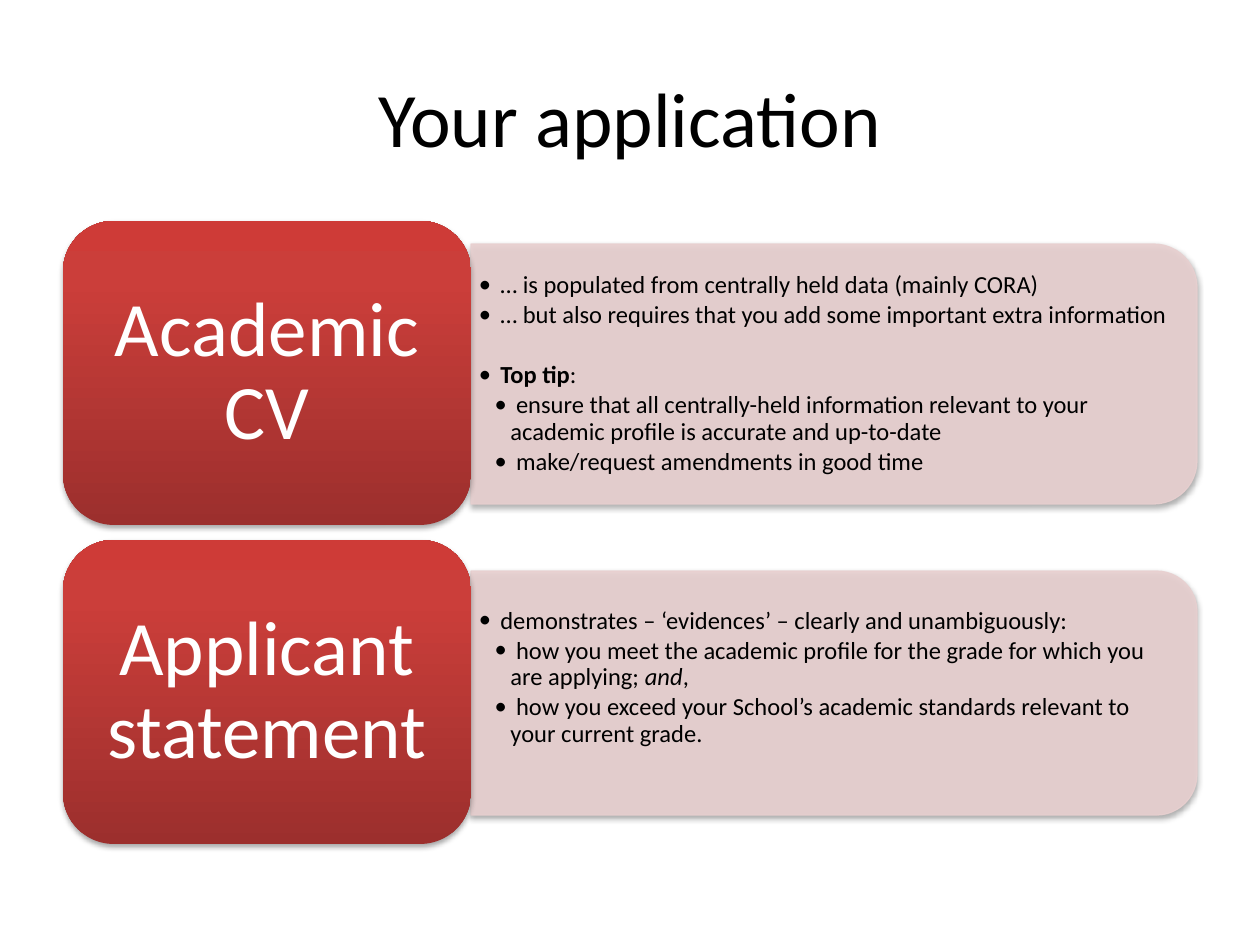
import copy

import pptx
import pptx.dml.color
import pptx.enum.shapes
import pptx.enum.text
import pptx.oxml
import pptx.oxml.ns
import pptx.util

EMU_PER_PX = 914400 / 126
FONT = "Calibri"
BLACK, WHITE, PINK = "000000", "FFFFFF", "E8D0D0"
RED_STOPS = [(0, "9C2F2D"), (0.8, "CB3E3A"), (1, "CE3B37")]
LEFT, SPLIT, RIGHT = 63, 471, 1197
CARD_HEIGHT = 304
EMPTY_LINE = 30

SHAPE = pptx.enum.shapes.MSO_SHAPE
CENTER = pptx.enum.text.PP_ALIGN.CENTER
NS = pptx.oxml.ns.nsdecls("a")
qn = pptx.oxml.ns.qn


def px(n):
    return pptx.util.Emu(round(n * EMU_PER_PX))


def rgb(value):
    return pptx.dml.color.RGBColor.from_string(value)


def add_alpha(fill_parent, percent):
    color = fill_parent.find(qn("a:solidFill"))[0]
    color.append(pptx.oxml.parse_xml(f'<a:alpha {NS} val="{percent * 1000}"/>'))


def add_shadow(sp):
    sp.shadow.inherit = False
    effects = sp._element.spPr.find(qn("a:effectLst"))
    effects.append(pptx.oxml.parse_xml(
        f'<a:outerShdw {NS} blurRad="40000" dist="23000" '
        'dir="5400000" rotWithShape="0"><a:srgbClr val="000000">'
        '<a:alpha val="35000"/></a:srgbClr></a:outerShdw>'))


def set_frame(tf, left, top, right, bottom):
    tf.word_wrap = True
    tf.vertical_anchor = pptx.enum.text.MSO_ANCHOR.MIDDLE
    tf.margin_left, tf.margin_top = px(left), px(top)
    tf.margin_right, tf.margin_bottom = px(right), px(bottom)


def style(p, size, color):
    p.font.name = FONT
    p.font.size = pptx.util.Pt(size)
    p.font.color.rgb = rgb(color)


def add_title(s, text):
    tf = s.shapes.add_textbox(px(63), px(38), px(1134), px(157)).text_frame
    set_frame(tf, 13, 6, 13, 6)
    p = tf.paragraphs[0]
    p.text, p.alignment = text, CENTER
    style(p, 44, BLACK)


def add_panel(s, top, height):
    """Panel rounded on the right: a top-rounded rectangle turned by 90 degrees."""
    width = RIGHT - SPLIT
    shift = (width - height) / 2
    sp = s.shapes.add_shape(SHAPE.ROUND_2_SAME_RECTANGLE, px(SPLIT + shift),
                            px(top - shift), px(height), px(width))
    sp.rotation = 90
    sp.fill.solid()
    sp.fill.fore_color.rgb = rgb(PINK)
    sp.line.color.rgb = rgb(PINK)
    sp.line.width = pptx.util.Pt(0.75)
    add_alpha(sp._element.spPr, 90)
    add_alpha(sp._element.spPr.find(qn("a:ln")), 90)
    add_shadow(sp)


def add_card(s, top, text):
    sp = s.shapes.add_shape(SHAPE.ROUNDED_RECTANGLE, px(LEFT), px(top),
                            px(SPLIT - LEFT), px(CARD_HEIGHT))
    sp.fill.gradient()
    sp.fill.gradient_angle = 90
    stop_list = sp._element.spPr.find(qn("a:gradFill")).find(qn("a:gsLst"))
    stop_list.append(copy.deepcopy(stop_list[-1]))
    for stop, (position, color) in zip(sp.fill.gradient_stops, RED_STOPS):
        stop.position = position
        stop.color.rgb = rgb(color)
    sp.line.fill.background()
    add_shadow(sp)
    set_frame(sp.text_frame, 23, 11, 23, 11)
    p = sp.text_frame.paragraphs[0]
    p.text, p.alignment, p.line_spacing = text, CENTER, 0.9
    style(p, 44, WHITE)


def add_bullet(p, level, runs, gap):
    for text, emphasis in runs:
        r = p.add_run()
        r.text = text
        if emphasis == "bold":
            r.font.bold = True
        elif emphasis == "italic":
            r.font.italic = True
    p.level = level
    p.line_spacing = 0.9
    p.space_before = px(gap)
    p.space_after = pptx.util.Pt(2)
    style(p, 14, BLACK)
    pPr = p._p.get_or_add_pPr()
    pPr.set("marL", str(114300 * level))
    pPr.set("indent", "-114300")
    for tag in (f'buFont {NS} typeface="{FONT}"', f'buChar {NS} char="•"'):
        pPr.find(qn("a:defRPr")).addprevious(pptx.oxml.parse_xml(f"<a:{tag}/>"))


def add_bullets(s, top, height, bullets, bottom_gap):
    tf = s.shapes.add_textbox(px(SPLIT), px(top), px(713), px(height)).text_frame
    set_frame(tf, 8, 4, 8, 4 + bottom_gap)
    for i, (level, runs, gap) in enumerate(bullets):
        p = tf.add_paragraph() if i else tf.paragraphs[0]
        add_bullet(p, level, runs, gap)


# Bullets: level, runs of (text, emphasis), gap above in px
CV_BULLETS = [
    (1, [(" … is populated from centrally held data (mainly CORA)", None)], 0),
    (1, [(" … but also requires that you add some important extra information",
          None)], 0),
    (1, [(" ", None), ("Top tip", "bold"), (":", None)], EMPTY_LINE),
    (2, [(" ensure that all centrally-held information relevant to your "
          "academic profile is accurate and up-to-date", None)], 0),
    (2, [(" make/request amendments in good time", None)], 0),
]
STATEMENT_BULLETS = [
    (1, [(" demonstrates – ‘evidences’ – clearly and unambiguously:", None)], 0),
    (2, [(" how you meet the academic profile for the grade for which you "
          "are applying; ", None), ("and", "italic"), (",", None)], 0),
    (2, [(" how you exceed your School’s academic standards relevant to "
          "your current grade.", None)], 0),
]
# Rows: card top, heading, panel top and height, text top and height,
# bullets, gap below the text
ROWS = [
    (221, "Academic CV", 244, 260, 257, 234, CV_BULLETS, 0),
    (540, "Applicant statement", 571, 244, 583, 219, STATEMENT_BULLETS, EMPTY_LINE),
]


def main():
    prs = pptx.Presentation()
    prs.slide_width, prs.slide_height = px(1260), px(945)
    s = prs.slides.add_slide(prs.slide_layouts[6])

    add_title(s, "Your application")
    for (card_top, heading, panel_top, panel_height,
         text_top, text_height, bullets, bottom_gap) in ROWS:
        add_panel(s, panel_top, panel_height)
        add_bullets(s, text_top, text_height, bullets, bottom_gap)
        add_card(s, card_top, heading)

    prs.save("out.pptx")


if __name__ == "__main__":
    main()
